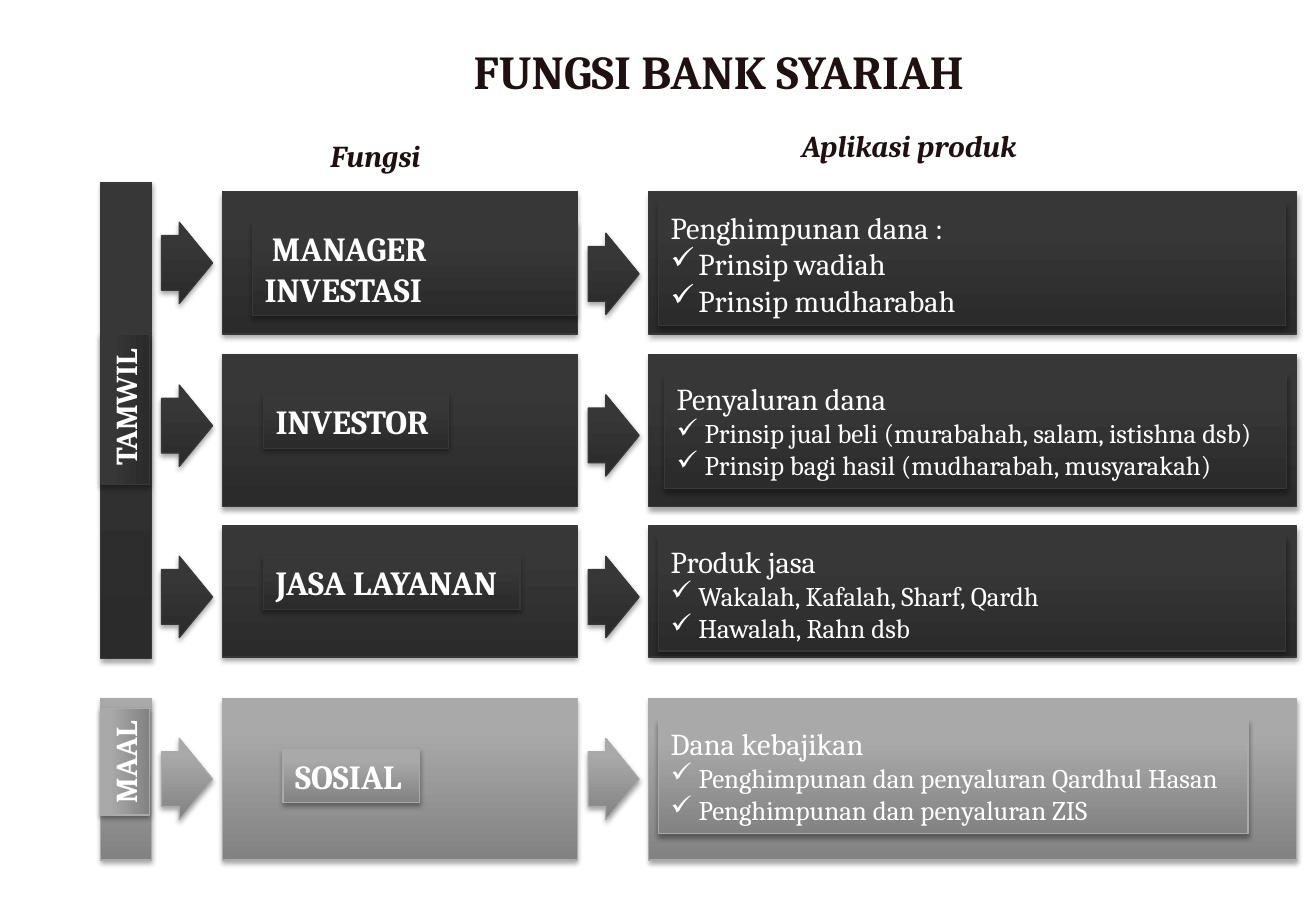
"""Build the slide on the functions of an Islamic bank and their products."""
from dataclasses import dataclass

from lxml import etree
from pptx import Presentation
from pptx import util as u
from pptx.dml.color import RGBColor
from pptx.enum import shapes, text
from pptx.oxml import parse_xml
from pptx.oxml.ns import qn

FONT = "Cambria"
WHITE, INK = "FFFFFF", "1F1111"
SHADOW = (
    '<a:effectLst xmlns:a="http://schemas.openxmlformats.org/drawingml/2006/main">'
    '<a:outerShdw blurRad="39370" dist="22860" dir="5400000" rotWithShape="0">'
    '<a:srgbClr val="000000"><a:alpha val="35000"/></a:srgbClr>'
    "</a:outerShdw></a:effectLst>"
)
BAND_LEFT, FUNCTION_LEFT, PRODUCT_LEFT = 0.83, 1.83, 5.34
BAND_WIDTH, FUNCTION_WIDTH, PRODUCT_WIDTH = 0.42, 2.92, 5.33
ARROW_LEFTS = (1.33, 4.84)


@dataclass(frozen=True)
class Tone:
    dark: str
    light: str
    edge: str


@dataclass(frozen=True)
class Box:
    left: float
    top: float
    width: float
    height: float


@dataclass(frozen=True)
class Line:
    words: str
    size: float
    bold: bool = False
    italic: bool = False
    color: str = WHITE
    bullet: bool = False
    indent: float = 0


@dataclass(frozen=True)
class Label:
    box: Box
    lines: tuple[Line, ...]
    wrap: bool = False
    rotation: float = 0


@dataclass(frozen=True)
class Row:
    top: float
    height: float
    arrow_tops: tuple[float, float]
    tone: Tone
    function: Label
    product: Label


@dataclass(frozen=True)
class Band:
    top: float
    height: float
    tone: Tone
    label: Label


def rgb(value: str) -> RGBColor:
    return RGBColor.from_string(value)


def inches(box: Box) -> tuple[u.Length, ...]:
    return tuple(u.Inches(n) for n in (box.left, box.top, box.width, box.height))


def product_lines(heading: str, items: tuple[str, ...], size: float = 16) -> tuple[Line, ...]:
    return (Line(heading, 18), *(Line(item, size, bullet=True) for item in items))


def write(frame, lines: tuple[Line, ...], wrap: bool, align=text.PP_ALIGN.LEFT) -> None:
    frame.word_wrap = wrap
    frame.vertical_anchor = text.MSO_ANCHOR.TOP
    frame.auto_size = text.MSO_AUTO_SIZE.SHAPE_TO_FIT_TEXT
    for index, line in enumerate(lines):
        paragraph = frame.add_paragraph() if index else frame.paragraphs[0]
        paragraph.alignment = align
        properties = paragraph._p.get_or_add_pPr()
        if line.bullet:
            properties.set("marL", str(u.Inches(0.23)))
            properties.set("indent", str(u.Inches(-0.23)))
            etree.SubElement(properties, qn("a:buChar")).set("char", "✓")
        elif line.indent:
            properties.set("marL", "0")
            properties.set("indent", str(u.Inches(line.indent)))
        run = paragraph.add_run()
        run.text = line.words
        run.font.name, run.font.size = FONT, u.Pt(line.size)
        run.font.bold, run.font.italic = line.bold, line.italic
        run.font.color.rgb = rgb(line.color)


def draw_shape(parent, preset: shapes.MSO_SHAPE, box: Box, tone: Tone):
    shape = parent.add_shape(preset, *inches(box))
    shape.fill.gradient()
    shape.fill.gradient_angle = 90
    for stop, color, position in zip(shape.fill.gradient_stops, (tone.dark, tone.light), (0, 0.8)):
        stop.color.rgb = rgb(color)
        stop.position = position
    shape.line.color.rgb = rgb(tone.edge)
    shape.line.width = u.Pt(0.75)
    shape._element.spPr.append(parse_xml(SHADOW))
    return shape


def draw_panel(slide, box: Box, tone: Tone, label: Label) -> None:
    group = slide.shapes.add_group_shape().shapes
    draw_shape(group, shapes.MSO_SHAPE.RECTANGLE, box, tone)
    plate = draw_shape(group, shapes.MSO_SHAPE.RECTANGLE, label.box, tone)
    plate.rotation = label.rotation
    write(plate.text_frame, label.lines, label.wrap)


def draw_arrow(slide, left: float, top: float, tone: Tone) -> None:
    arrow = draw_shape(slide.shapes, shapes.MSO_SHAPE.RIGHT_ARROW, Box(left, top, 0.42, 0.67), tone)
    arrow.adjustments[0], arrow.adjustments[1] = 0.673, 0.654


def draw_row(slide, row: Row) -> None:
    draw_panel(slide, Box(FUNCTION_LEFT, row.top, FUNCTION_WIDTH, row.height), row.tone, row.function)
    draw_panel(slide, Box(PRODUCT_LEFT, row.top, PRODUCT_WIDTH, row.height), row.tone, row.product)
    for left, top in zip(ARROW_LEFTS, row.arrow_tops):
        draw_arrow(slide, left, top, row.tone)


def draw_heading(slide, box: Box, words: str, align: text.PP_ALIGN) -> None:
    heading = slide.shapes.add_textbox(*inches(box))
    write(heading.text_frame, (Line(words, 18, True, True, INK),), False, align)


TAMWIL = Tone("2B2B2B", "373737", "383838")
MAAL = Tone("828282", "A9A9A9", "AAAAAA")
ROWS = (
    Row(1.58, 1.17, (1.83, 1.92), TAMWIL,
        Label(Box(2.08, 1.83, 2.67, 0.77), (Line("MANAGER INVESTASI", 20, True, indent=0.06),), True),
        Label(Box(5.42, 1.67, 5.16, 1.01),
              product_lines("Penghimpunan dana :", ("Prinsip wadiah", "Prinsip mudharabah"), 18), True)),
    Row(2.92, 1.25, (3.17, 3.25), TAMWIL,
        Label(Box(2.17, 3.25, 1.52, 0.44), (Line("INVESTOR", 20, True),)),
        Label(Box(5.47, 3.08, 5.12, 0.94),
              product_lines("Penyaluran dana", ("Prinsip jual beli (murabahah, salam, istishna dsb)",
                                                "Prinsip bagi hasil (mudharabah, musyarakah)")), True)),
    Row(4.33, 1.08, (4.58, 4.58), TAMWIL,
        Label(Box(2.17, 4.58, 2.11, 0.44), (Line("JASA LAYANAN", 20, True),)),
        Label(Box(5.42, 4.42, 5.16, 0.94),
              product_lines("Produk jasa", ("Wakalah, Kafalah, Sharf, Qardh", "Hawalah, Rahn dsb")), True)),
    Row(5.75, 1.33, (6.08, 6.08), MAAL,
        Label(Box(2.33, 6.17, 1.12, 0.44), (Line("SOSIAL", 20, True),)),
        Label(Box(5.42, 5.92, 4.85, 0.94),
              product_lines("Dana kebajikan", ("Penghimpunan dan penyaluran Qardhul Hasan",
                                               "Penghimpunan dan penyaluran ZIS")))),
)
BANDS = (
    Band(1.5, 3.92, TAMWIL,
         Label(Box(0.41, 3.17, 1.24, 0.4), (Line("TAMWIL", 18, True, indent=0.06),), rotation=270)),
    Band(5.75, 1.33, MAAL, Label(Box(0.59, 6.07, 0.88, 0.4), (Line("MAAL", 18, True),), rotation=270)),
)


def main() -> None:
    deck = Presentation()
    deck.slide_width, deck.slide_height = u.Inches(10.83), u.Inches(7.5)
    slide = deck.slides.add_slide(deck.slide_layouts[5])
    title = slide.shapes.title
    title.left, title.top, title.width, title.height = inches(Box(1.58, 0.25, 8.67, 0.67))
    write(title.text_frame, (Line("FUNGSI BANK SYARIAH", 28, True, color=INK),), True, text.PP_ALIGN.CENTER)
    title.text_frame.vertical_anchor = text.MSO_ANCHOR.MIDDLE
    title.text_frame.auto_size = text.MSO_AUTO_SIZE.NONE
    for row in ROWS:
        draw_row(slide, row)
    for band in BANDS:
        draw_panel(slide, Box(BAND_LEFT, band.top, BAND_WIDTH, band.height), band.tone, band.label)
    draw_heading(slide, Box(2.61, 1.08, 0.96, 0.4), "Fungsi", text.PP_ALIGN.CENTER)
    draw_heading(slide, Box(6.5, 1, 1.99, 0.4), "Aplikasi produk", text.PP_ALIGN.LEFT)
    deck.save("out.pptx")


if __name__ == "__main__":
    main()
